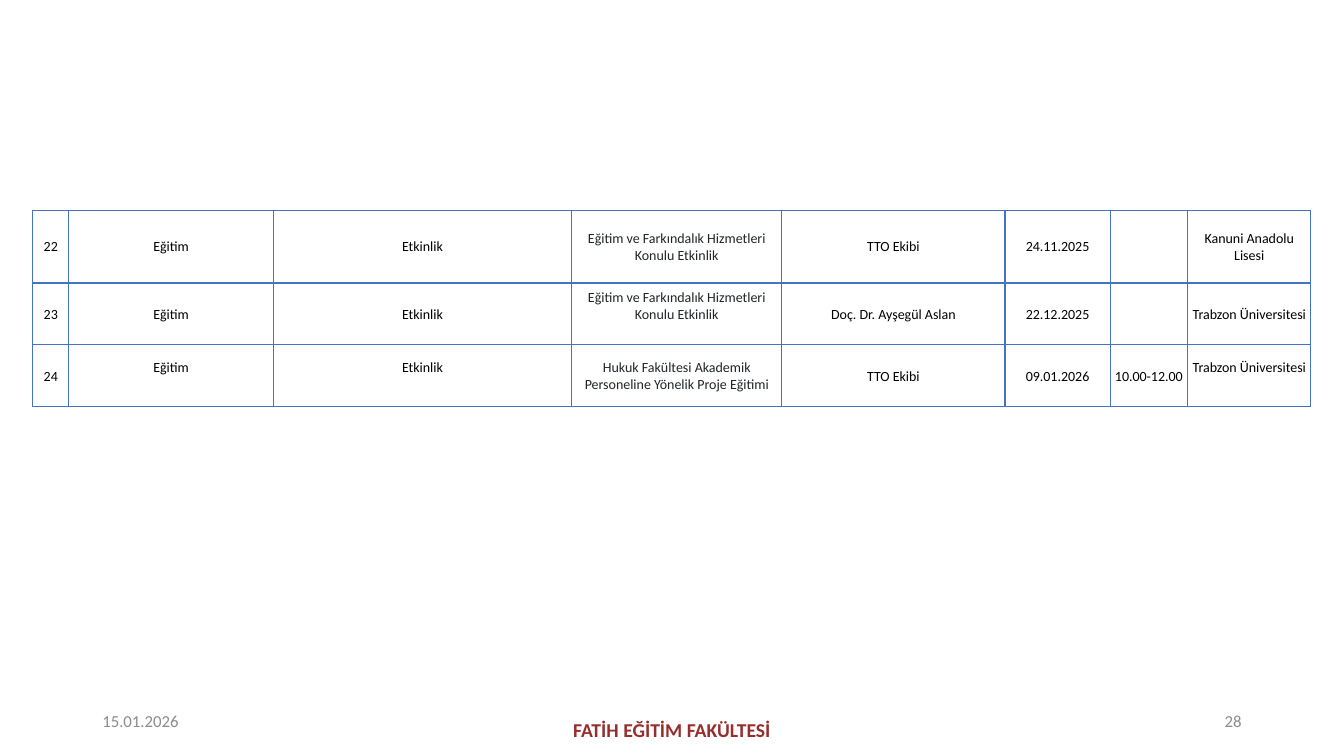
from dataclasses import dataclass

from lxml import etree
from pptx import Presentation
from pptx import util as u
from pptx.dml.color import RGBColor
from pptx.enum import text
from pptx.oxml import ns

Pt = u.Pt
ALIGN = text.PP_ALIGN


@dataclass(frozen=True)
class Theme:
    font: str = "Calibri"
    faculty: str = "962E2E"
    muted: str = "8C8C8C"
    ink: str = "000000"
    topic: str = "212529"
    border: str = "4472C4"
    faculty_size: int = 14
    footer_size: int = 12
    cell_size: int = 10


THEME = Theme()
COLUMN_WIDTHS = (25.5, 146.3, 213, 150.2, 159.4, 75.1, 55.4, 88)
ROW_HEIGHTS = (51.8, 44.3, 44.3)
TOPIC_COLUMN = 3
CELL_INSET = 0.72
RAISED_INSET = 12
RAISED_CELLS = {(1, 3), (2, 1), (2, 2), (2, 7)}
AWARENESS = "Eğitim ve Farkındalık Hizmetleri Konulu Etkinlik"
EVENTS = (
    ("22", "Eğitim", "Etkinlik", AWARENESS, "TTO Ekibi",
     "24.11.2025", "", "Kanuni Anadolu Lisesi"),
    ("23", "Eğitim", "Etkinlik", AWARENESS, "Doç. Dr. Ayşegül Aslan",
     "22.12.2025", "", "Trabzon Üniversitesi"),
    ("24", "Eğitim", "Etkinlik",
     "Hukuk Fakültesi Akademik Personeline Yönelik Proje Eğitimi", "TTO Ekibi",
     "09.01.2026", "10.00-12.00", "Trabzon Üniversitesi"),
)


def write(tf, words, size, color, align, bold=False):
    p = tf.paragraphs[0]
    p.alignment = align
    r = p.add_run()
    r.text = words
    r.font.name = THEME.font
    r.font.size = Pt(size)
    r.font.bold = bold
    r.font.color.rgb = RGBColor.from_string(color)


def add_label(s, box, words, size, color, align, bold=False):
    tf = s.shapes.add_textbox(*map(Pt, box)).text_frame
    tf.word_wrap = True
    tf.vertical_anchor = text.MSO_ANCHOR.MIDDLE
    write(tf, words, size, color, align, bold)


def add_borders(cell):
    tc_pr = cell._tc.get_or_add_tcPr()
    for side in ("lnL", "lnR", "lnT", "lnB"):
        line = etree.SubElement(tc_pr, ns.qn(f"a:{side}"), w=str(Pt(1)))
        fill = etree.SubElement(line, ns.qn("a:solidFill"))
        etree.SubElement(fill, ns.qn("a:srgbClr"), val=THEME.border)


def fill_cell(cell, words, color, raised):
    """Style and write one cell; a raised cell has extra room below its text."""
    add_borders(cell)
    cell.fill.background()
    cell.vertical_anchor = text.MSO_ANCHOR.MIDDLE
    cell.margin_left = cell.margin_right = cell.margin_top = Pt(CELL_INSET)
    cell.margin_bottom = Pt(RAISED_INSET if raised else 0)
    if words:
        write(cell.text_frame, words, THEME.cell_size, color, ALIGN.CENTER)


def add_event_table(s, left, top):
    table = s.shapes.add_table(
        len(ROW_HEIGHTS), len(COLUMN_WIDTHS), Pt(left), Pt(top),
        Pt(sum(COLUMN_WIDTHS)), Pt(sum(ROW_HEIGHTS))).table
    table.first_row = table.horz_banding = False
    for column, width in zip(table.columns, COLUMN_WIDTHS):
        column.width = Pt(width)
    for row, height in zip(table.rows, ROW_HEIGHTS):
        row.height = Pt(height)
    for i, event in enumerate(EVENTS):
        for j, words in enumerate(event):
            color = THEME.topic if j == TOPIC_COLUMN else THEME.ink
            fill_cell(table.cell(i, j), words, color, (i, j) in RAISED_CELLS)


def main():
    prs = Presentation()
    prs.slide_width, prs.slide_height = Pt(960), Pt(540)
    s = prs.slides.add_slide(prs.slide_layouts[6])
    add_label(s, (318, 507, 324, 29), "FATİH EĞİTİM FAKÜLTESİ",
              THEME.faculty_size, THEME.faculty, ALIGN.CENTER, bold=True)
    add_label(s, (66, 500.5, 216, 29), "15.01.2026",
              THEME.footer_size, THEME.muted, ALIGN.LEFT)
    add_label(s, (678, 500.5, 216, 29), "28",
              THEME.footer_size, THEME.muted, ALIGN.RIGHT)
    add_event_table(s, 23.5, 150.3)
    prs.save("out.pptx")


if __name__ == "__main__":
    main()
